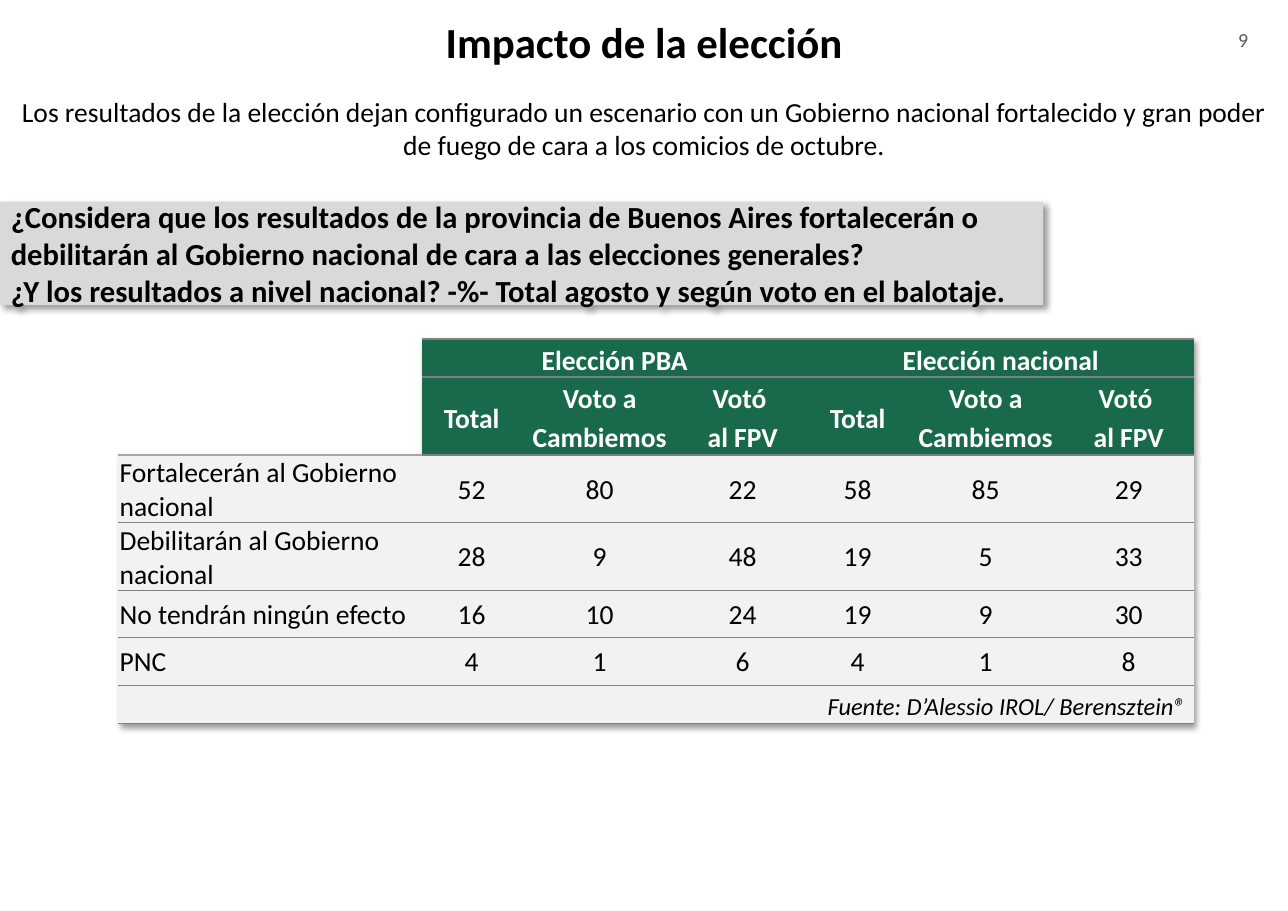
from lxml import etree
from pptx import Presentation
from pptx.dml.color import RGBColor
from pptx.enum.shapes import MSO_SHAPE
from pptx.enum.text import MSO_ANCHOR, MSO_AUTO_SIZE, PP_ALIGN
from pptx.oxml import parse_xml
from pptx.oxml.ns import qn
from pptx.util import Pt

LEFT, CENTER, RIGHT = PP_ALIGN.LEFT, PP_ALIGN.CENTER, PP_ALIGN.RIGHT
MIDDLE = MSO_ANCHOR.MIDDLE
RECTANGLE = MSO_SHAPE.RECTANGLE
NO_AUTOFIT = MSO_AUTO_SIZE.NONE
DRAWING_NS = "http://schemas.openxmlformats.org/drawingml/2006/main"
PLAIN_TABLE_STYLE = "{2D5ABB26-0587-4C30-8999-92F81FD0307C}"
GREEN, PALE, RULE, LIGHT_RULE = "19694B", "F2F2F2", "808080", "A6A6A6"
SHADOW = (f'<a:outerShdw xmlns:a="{DRAWING_NS}" blurRad="50800" dist="38100" dir="2700000" '
          'algn="tl" rotWithShape="0"><a:srgbClr val="000000"><a:alpha val="40000"/>'
          '</a:srgbClr></a:outerShdw>')


def color(hex_value):
    return RGBColor.from_string(hex_value)


def write(frame, text, size, align=LEFT, ink="000000", bold=False, italic=False, spacing=None):
    frame.text = text
    frame.word_wrap = True
    for paragraph in frame.paragraphs:
        paragraph.alignment = align
        if spacing:
            paragraph.line_spacing = spacing
        for run in paragraph.runs:
            run.font.name = "Calibri"
            run.font.size = Pt(size)
            run.font.color.rgb = color(ink)
            run.font.bold = bold
            run.font.italic = italic


prs = Presentation()
prs.slide_width, prs.slide_height = Pt(841.68), Pt(595.44)
slide = prs.slides.add_slide(prs.slide_layouts[5])

# Page number
page_number = slide.shapes.add_textbox(Pt(780.5), Pt(14.4), Pt(64), Pt(31.7))
write(page_number.text_frame, "9", 13, CENTER, "595959")

# Introduction
intro = slide.shapes.add_textbox(0, Pt(58.3), prs.slide_width, Pt(51))
intro.text_frame.vertical_anchor = MIDDLE
write(intro.text_frame, "Los resultados de la elección dejan configurado un escenario con un "
      "Gobierno nacional fortalecido y gran poder de fuego de cara a los comicios de octubre.",
      18, CENTER)

# Title
title = slide.shapes.title
title.left, title.top, title.width, title.height = 0, Pt(-7), prs.slide_width, Pt(67.7)
title.text_frame.auto_size = NO_AUTOFIT
title.text_frame.vertical_anchor = MIDDLE
write(title.text_frame, "Impacto de la elección", 28, CENTER, bold=True)

# Results table
sub_headers = ["Total", "Voto a Cambiemos", "Votó \nal FPV"]
rows = [
    ["", "Elección PBA", "", "", "Elección nacional", "", ""],
    ["", *sub_headers, *sub_headers],
    ["Fortalecerán al Gobierno nacional", 52, 80, 22, 58, 85, 29],
    ["Debilitarán al Gobierno nacional", 28, 9, 48, 19, 5, 33],
    ["No tendrán ningún efecto", 16, 10, 24, 19, 9, 30],
    ["PNC", 4, 1, 6, 4, 1, 8],
    ["Fuente: D’Alessio IROL/ Berensztein®", "", "", "", "", "", ""],
]
vote_widths = [65.3, 102, 85]
column_widths = [198.4, *vote_widths, *vote_widths]
row_heights = [22.3, 51, 31, 31, 31, 31, 25.2]
results_frame = slide.shapes.add_table(len(rows), len(column_widths), Pt(77.2), Pt(221.6),
                                       Pt(sum(column_widths)), Pt(sum(row_heights)))
results = results_frame.table
results.first_row = results.horz_banding = False
for column, width in zip(results.columns, column_widths):
    column.width = Pt(width)
for row, height in zip(results.rows, row_heights):
    row.height = Pt(height)

last = len(rows) - 1
for r, values in enumerate(rows):
    for c, value in enumerate(values):
        cell = results.cell(r, c)
        header, source = r < 2, r == last
        corner = header and c == 0
        side = 5 if header or source else 1
        cell.margin_left = cell.margin_right = Pt(side)
        cell.margin_top = Pt(0 if header or source else 1)
        cell.margin_bottom = 0
        cell.vertical_anchor = MIDDLE

        if header:
            write(cell.text_frame, value, 18, CENTER, "FFFFFF", bold=True, spacing=1.15)
        elif source:
            write(cell.text_frame, value, 16, RIGHT, italic=True, spacing=1.15)
        else:
            write(cell.text_frame, str(value), 18, CENTER if c else LEFT)

        if corner:
            cell.fill.background()
        else:
            cell.fill.solid()
            cell.fill.fore_color.rgb = color(GREEN if header else PALE)

        # Horizontal rules; the empty corner only has the one under it
        edges = {"lnT": RULE, "lnB": RULE}
        if corner:
            edges = {"lnB": LIGHT_RULE} if r == 1 else {}
        elif r == 2 and c == 0:
            edges["lnT"] = LIGHT_RULE
        properties = cell._tc.get_or_add_tcPr()
        for position, (edge, ink) in enumerate(edges.items()):
            properties.insert(position, parse_xml(
                f'<a:{edge} xmlns:a="{DRAWING_NS}" w="12700"><a:solidFill>'
                f'<a:srgbClr val="{ink}"/></a:solidFill></a:{edge}>'))

for r, first, final in [(0, 1, 3), (0, 4, 6), (last, 0, 6)]:
    results.cell(r, first).merge(results.cell(r, final))

table_properties = results._tbl.tblPr
table_properties.find(qn("a:tableStyleId")).text = PLAIN_TABLE_STYLE
table_effects = etree.Element(qn("a:effectLst"))
table_effects.append(parse_xml(SHADOW))
table_properties.insert(0, table_effects)

# Survey question
question = slide.shapes.add_shape(RECTANGLE, 0, Pt(131.8), Pt(681.8), Pt(67.7))
question.fill.solid()
question.fill.fore_color.rgb = color("D9D9D9")
question.line.fill.background()
question.shadow.inherit = False
question.element.spPr.find(qn("a:effectLst")).append(parse_xml(SHADOW))
question.text_frame.vertical_anchor = MIDDLE
write(question.text_frame, "¿Considera que los resultados de la provincia de Buenos Aires "
      "fortalecerán o debilitarán al Gobierno nacional de cara a las elecciones generales?\n"
      "¿Y los resultados a nivel nacional? -%- Total agosto y según voto en el balotaje.",
      20, bold=True)

prs.save("out.pptx")
